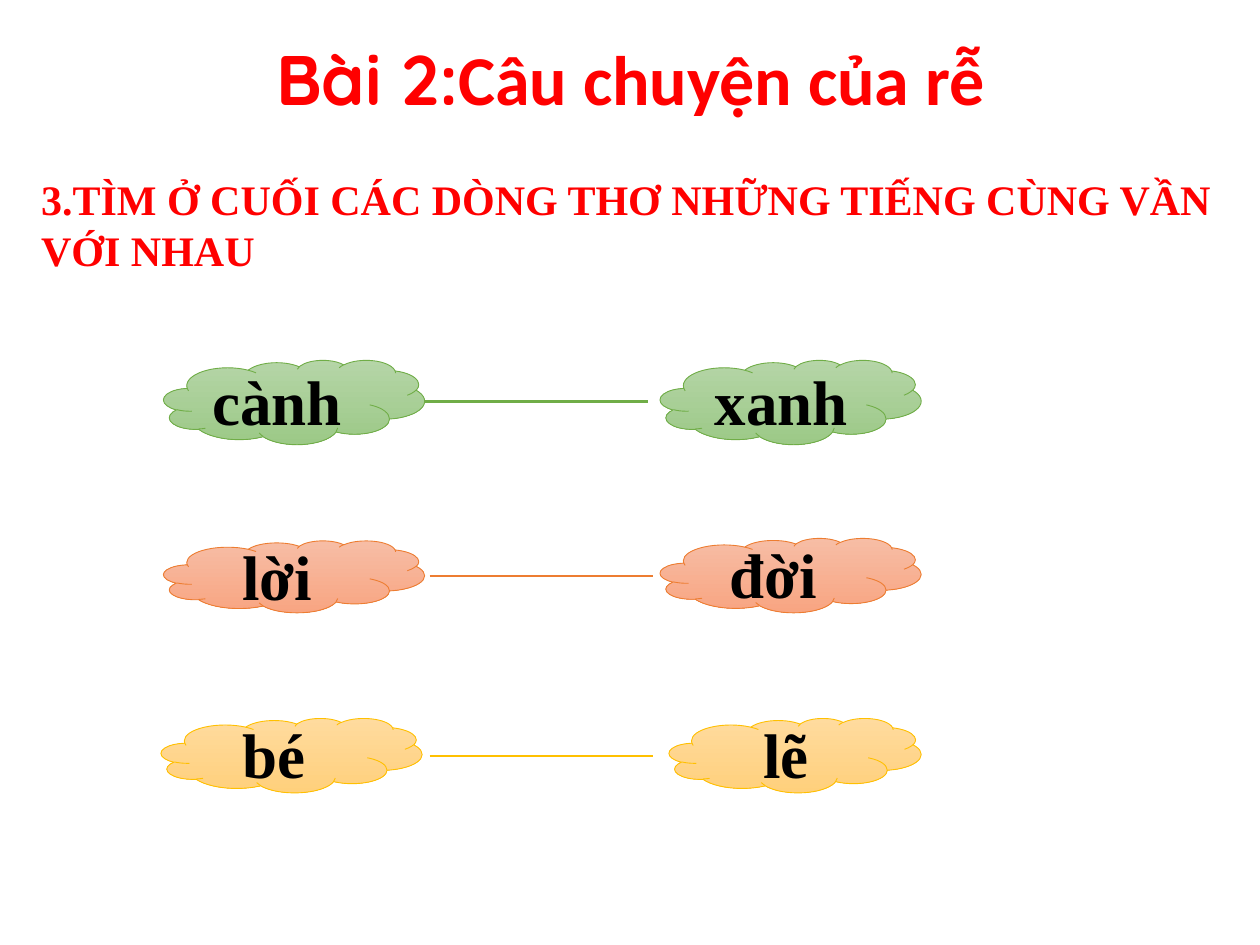
from lxml import etree
from pptx import Presentation
from pptx.dml.color import RGBColor
from pptx.enum.shapes import MSO_CONNECTOR, MSO_SHAPE
from pptx.enum.text import MSO_ANCHOR, PP_ALIGN
from pptx.oxml.ns import qn
from pptx.util import Cm, Pt

CLOUD = MSO_SHAPE.CLOUD
LINE = MSO_CONNECTOR.STRAIGHT
MID = MSO_ANCHOR.MIDDLE
MIDDLE = PP_ALIGN.CENTER
SERIF = "Times New Roman"
RED = "FF0000"

TITLE = [("Bài 2:", "Quicksand"), ("Câu chuyện của rễ", "Calibri")]
TASK = "3.TÌM Ở CUỐI CÁC DÒNG THƠ NHỮNG TIẾNG CÙNG VẦN VỚI NHAU"
SPAN = 4.5
PAIRS = [
    {"edge": "70AD47", "fade": ("B5D5A7", "9CC987"), "line": (8.56, 8.1),
     "words": [("cành ", (3.3, 7.26, 5.26, 1.7)),
               ("xanh ", (13.31, 7.26, 5.26, 1.7))]},
    {"edge": "ED7D31", "fade": ("F7BDA5", "F8A582"), "line": (8.66, 11.61),
     "words": [("lời ", (3.3, 10.9, 5.26, 1.45)),
               ("đời ", (13.31, 10.85, 5.26, 1.5))]},
    {"edge": "FFC000", "fade": ("FFDB9E", "FFD07C"), "line": (8.66, 15.24),
     "words": [("bé ", (3.25, 14.48, 5.26, 1.5)),
               ("lẽ", (13.49, 14.48, 5.08, 1.5))]},
]


def tint(color):
    return RGBColor.from_string(color)


def place(*box):
    return [Cm(v) for v in box]


def style(font, size, color, name=None):
    font.size, font.bold = Pt(size), True
    font.color.rgb = tint(color)
    if name:
        font.name = name


def text_box(slide, box):
    frame = slide.shapes.add_textbox(*place(*box)).text_frame
    frame.word_wrap = True
    return frame


def add_cloud(slide, word, box, pair):
    cloud = slide.shapes.add_shape(CLOUD, *place(*box))
    cloud.shadow.inherit = False
    cloud.fill.gradient()
    cloud.fill.gradient_angle = 270
    for stop, color in zip(cloud.fill.gradient_stops, pair["fade"]):
        stop.color.rgb = tint(color)
    cloud.line.color.rgb = tint(pair["edge"])
    cloud.line.width = Pt(0.5)
    frame = cloud.text_frame
    frame.vertical_anchor = MID
    para = frame.paragraphs[0]
    para.text, para.alignment = word, MIDDLE
    style(para.font, 36, "000000", SERIF)


def add_line(slide, pair):
    x, y = pair["line"]
    line = slide.shapes.add_connector(LINE, *place(x, y, x + SPAN, y))
    line.line.color.rgb = tint(pair["edge"])
    line.line.width = Pt(1.5)
    etree.SubElement(line._element.spPr, qn("a:effectLst"))


def main():
    deck = Presentation()
    deck.slide_width, deck.slide_height = place(25.4, 19.05)
    slide = deck.slides.add_slide(deck.slide_layouts[6])

    task = text_box(slide, (0.58, 3.38, 24.31, 2.31)).paragraphs[0]
    task.text = TASK
    style(task.font, 24, RED, SERIF)

    frame = text_box(slide, (1.37, 0.61, 22.68, 1.9))
    frame.margin_left = frame.margin_right = Cm(0.18)
    frame.margin_top = frame.margin_bottom = Cm(0.1)
    title = frame.paragraphs[0]
    title.alignment = MIDDLE
    for words, name in TITLE:
        run = title.add_run()
        run.text = words
        style(run.font, 40, RED, name)

    for pair in PAIRS:
        for word, box in pair["words"]:
            add_cloud(slide, word, box, pair)
    for pair in PAIRS:
        add_line(slide, pair)

    deck.save("out.pptx")


if __name__ == "__main__":
    main()
